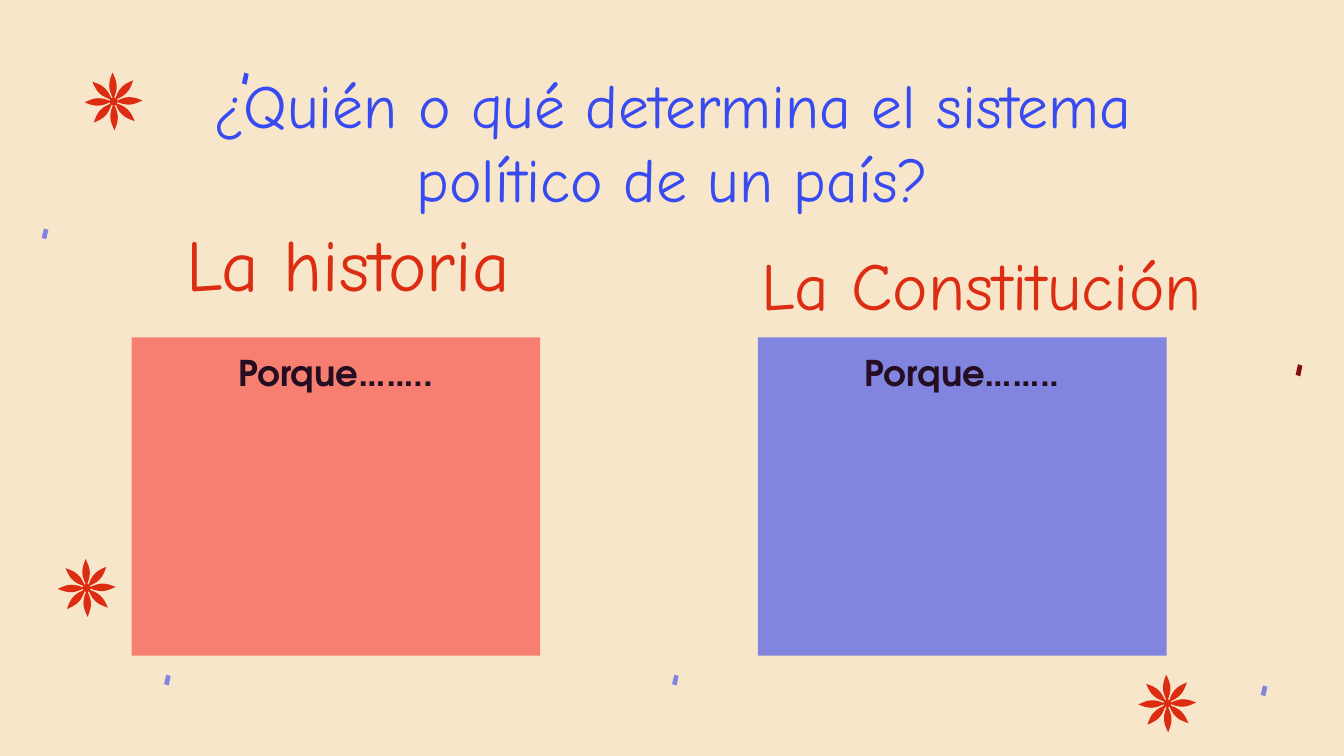
from dataclasses import dataclass
from math import cos, pi, radians, sin

from pptx import Presentation
from pptx.dml.color import RGBColor
from pptx.enum.shapes import MSO_SHAPE
from pptx.enum.text import MSO_ANCHOR, PP_ALIGN
from pptx.util import Inches, Pt


@dataclass(frozen=True)
class Theme:
    paper: str = "F8E6CA"
    red: str = "DC2D12"
    blue: str = "384BF1"
    lilac: str = "8285E0"
    coral: str = "F77F72"
    maroon: str = "860D10"
    ink: str = "250E22"
    hand: str = "Comic Neue"
    sans: str = "TeX Gyre Adventor"
    question: int = 33
    history: int = 39
    constitution: int = 36
    card: int = 19


T = Theme()
PETALS, TILT = 8, -2  # petals in a flower, degrees off upright
STEPS = 8  # points along each petal edge
TICK = [(0.7, 1), (0, 0.88), (0.35, 0), (1, 0.12)]  # corners as shares of its box


def emu(box):
    return [Inches(v) for v in box]


def paint(sp, color):
    sp.shadow.inherit = False
    sp.fill.solid()
    sp.fill.fore_color.rgb = RGBColor.from_string(color)
    sp.line.fill.background()


def outline(shapes, points, color):
    pts = [(Inches(x), Inches(y)) for x, y in points]
    fb = shapes.build_freeform(*pts[0])
    fb.add_line_segments(pts[1:], close=True)
    paint(fb.convert_to_shape(), color)


def write(sp, text, font, size, color, bold=False, anchor=MSO_ANCHOR.TOP):
    tf = sp.text_frame
    tf.word_wrap = True
    tf.vertical_anchor = anchor
    tf.margin_left = tf.margin_right = tf.margin_top = tf.margin_bottom = Inches(0.1)
    p = tf.paragraphs[0]
    p.text = text
    p.alignment = PP_ALIGN.CENTER
    p.font.name, p.font.bold = font, bold
    p.font.size = Pt(size)
    p.font.color.rgb = RGBColor.from_string(color)


def add_flower(slide, box):
    """Ring of lens-shaped petals around a small round hub."""
    x, y, w, h = box
    cx, cy, radius = x + w / 2, y + h / 2, w / 2
    inner, half, hub = 0.07 * radius, 0.13 * radius, 0.14 * radius
    shapes = slide.shapes.add_group_shape().shapes

    # Petal pointing right: out along one edge, back along the other
    edge = [(inner + (radius - inner) * i / STEPS, half * sin(pi * i / STEPS))
            for i in range(STEPS + 1)]
    petal = edge + [(u, -v) for u, v in edge[-2:0:-1]]
    for k in range(PETALS):
        a = radians(TILT + 360 / PETALS * k)
        outline(shapes, [(cx + u * cos(a) - v * sin(a), cy + u * sin(a) + v * cos(a))
                         for u, v in petal], T.red)

    # Hub
    paint(shapes.add_shape(MSO_SHAPE.OVAL,
                           *emu((cx - hub, cy - hub, 2 * hub, 2 * hub))), T.red)


def add_tick(slide, box, color):
    x, y, w, h = box
    outline(slide.shapes, [(x + u * w, y + v * h) for u, v in TICK], color)


def add_heading(slide, box, text, size, color, anchor):
    sp = slide.shapes.add_textbox(*emu(box))
    write(sp, text, T.hand, size, color, anchor=anchor)


def add_card(slide, box, text, color):
    sp = slide.shapes.add_shape(MSO_SHAPE.RECTANGLE, *emu(box))
    paint(sp, color)
    write(sp, text, T.sans, T.card, T.ink, bold=True)


def main():
    prs = Presentation()
    prs.slide_width = Inches(10)
    prs.slide_height = prs.slide_width * 9 // 16
    slide = prs.slides.add_slide(prs.slide_layouts[6])
    slide.background.fill.solid()
    slide.background.fill.fore_color.rgb = RGBColor.from_string(T.paper)

    # Scattered decoration
    for x, y in [(8.47, 5.02), (0.43, 4.16), (0.63, 0.54)]:
        add_flower(slide, (x, y, 0.43, 0.43))
    for x, y, color in [(0.31, 1.7, T.lilac), (1.8, 0.54, T.blue),
                        (9.64, 2.71, T.maroon), (5, 5.02, T.lilac),
                        (9.38, 5.1, T.lilac), (1.22, 5.02, T.lilac)]:
        add_tick(slide, (x, y, 0.05, 0.08 if color == T.lilac else 0.09), color)

    # Answer headings
    for box, text, size in [
            ((1.07, 1.77, 3.04, 0.61), "La historia", T.history),
            ((5.39, 1.9, 3.83, 0.61), "La Constitución", T.constitution)]:
        add_heading(slide, box, text, size, T.red, MSO_ANCHOR.BOTTOM)

    # Answer cards
    for x, color in [(5.64, T.lilac), (0.98, T.coral)]:
        add_card(slide, (x, 2.51, 3.04, 2.37), "Porque……..", color)

    # Question
    add_heading(slide, (0.79, 0.4, 8.43, 0.63),
                "¿Quién o qué determina el sistema político de un país?",
                T.question, T.blue, MSO_ANCHOR.TOP)

    prs.save("out.pptx")


if __name__ == "__main__":
    main()
